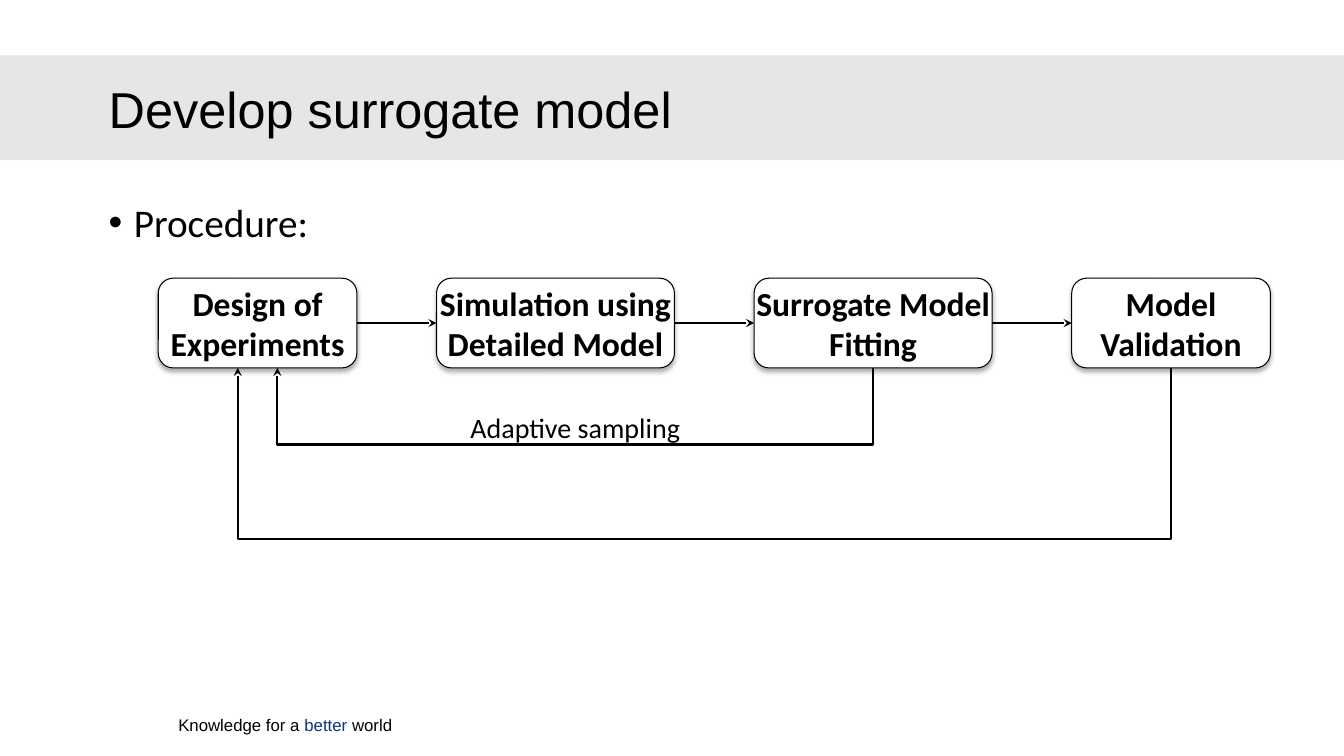
from lxml.etree import SubElement
from pptx import Presentation
from pptx.dml.color import RGBColor
from pptx.enum.shapes import MSO_CONNECTOR as Connector, MSO_SHAPE as Shape
from pptx.enum.text import MSO_ANCHOR as Anchor, PP_ALIGN as Align
from pptx.oxml.ns import qn
from pptx.util import Inches, Pt

COLORS = {"black": "000000", "white": "FFFFFF", "band": "E7E6E6", "accent": "0D3475"}
STEPS = [
    ("Design of\nExperiments", 1.97),
    ("Simulation using\nDetailed Model", 2.36),
    ("Surrogate Model\nFitting", 2.36),
    ("Model\nValidation", 1.97),
]
GAP = 0.79


def color(name):
    return RGBColor.from_string(COLORS[name])


def write_text(frame, text, size, font="Calibri", bold=False, align=Align.LEFT,
               anchor=Anchor.TOP, wrap=True, spacing=None, after=None,
               bullet=None, accent=None):
    frame.word_wrap = wrap
    frame.vertical_anchor = anchor
    for index, line in enumerate(text.split("\n")):
        paragraph = frame.paragraphs[0] if index == 0 else frame.add_paragraph()
        paragraph.alignment = align
        if spacing:
            paragraph.line_spacing = spacing
        if after:
            paragraph.space_after = Pt(after)
        if bullet:
            properties = paragraph._p.get_or_add_pPr()
            properties.set("marL", str(Inches(0.25)))
            properties.set("indent", str(Inches(-0.25)))
            SubElement(properties, qn("a:buFont"), typeface="Arial")
            SubElement(properties, qn("a:buChar"), char=bullet)
        before, word, rest = line.partition(accent) if accent else (line, "", "")
        for part, name in ((before, "black"), (word, "accent"), (rest, "black")):
            if part:
                run = paragraph.add_run()
                run.text = part
                run.font.size = Pt(size)
                run.font.name = font
                run.font.bold = bold
                run.font.color.rgb = color(name)


def add_text(slide, box, text, size, **text_format):
    shape = slide.shapes.add_textbox(*map(Inches, box))
    write_text(shape.text_frame, text, size, **text_format)


def style_arrow(arrow):
    arrow.line.color.rgb = color("black")
    arrow.line.width = Pt(1.5)
    SubElement(arrow.line._get_or_add_ln(), qn("a:tailEnd"), type="stealth")


def add_soft_shadow(shape):
    shape.shadow.inherit = False
    effects = shape._element.spPr.find(qn("a:effectLst"))
    shadow = SubElement(effects, qn("a:outerShdw"), blurRad=str(Pt(3.5)),
                        dist=str(Pt(2.2)), dir="5400000", rotWithShape="0")
    shade = SubElement(shadow, qn("a:srgbClr"), val=COLORS["black"])
    SubElement(shade, qn("a:alpha"), val="32000")


def add_step(slide, box, text):
    shape = slide.shapes.add_shape(Shape.ROUNDED_RECTANGLE, *map(Inches, box))
    shape.fill.solid()
    shape.fill.fore_color.rgb = color("white")
    shape.line.color.rgb = color("black")
    shape.line.width = Pt(0.75)
    add_soft_shadow(shape)
    write_text(shape.text_frame, text, 24, bold=True, align=Align.CENTER,
               anchor=Anchor.MIDDLE, wrap=False)
    return shape


def connect_steps(slide, source, target):
    arrow = slide.shapes.add_connector(Connector.STRAIGHT, 0, 0, 0, 0)
    arrow.begin_connect(source, 3)
    arrow.end_connect(target, 1)
    style_arrow(arrow)
    SubElement(arrow._element.spPr, qn("a:effectLst"))


def add_feedback(slide, start, end, bottom, depth):
    builder = slide.shapes.build_freeform(Inches(start), Inches(bottom))
    corners = [(start, bottom + depth), (end, bottom + depth), (end, bottom)]
    builder.add_line_segments([(Inches(x), Inches(y)) for x, y in corners], close=False)
    loop = builder.convert_to_shape()
    loop.fill.background()
    loop.shadow.inherit = False
    style_arrow(loop)


def add_header(slide, left, top, width, height):
    band = slide.shapes.add_shape(Shape.RECTANGLE, *map(Inches, (left, top, width, height)))
    band.fill.solid()
    band.fill.fore_color.rgb = color("band")
    band.line.fill.background()
    band.shadow.inherit = False
    add_text(slide, (left + 0.98, top - 0.16, 11.5, 1.45), "Develop surrogate model",
             36, font="Arial", anchor=Anchor.MIDDLE, spacing=0.9)


def add_procedure(slide, left, top, height):
    shapes, centers = [], []
    x = left
    for text, width in STEPS:
        shapes.append(add_step(slide, (x, top, width, height), text))
        centers.append(x + width / 2)
        x += width + GAP
    for source, target in zip(shapes, shapes[1:]):
        connect_steps(slide, source, target)

    bottom = top + height
    first_width = STEPS[0][1]
    inner_end = left + 0.6 * first_width
    outer_end = left + 0.4 * first_width
    add_feedback(slide, centers[2], inner_end, bottom, 0.76)
    add_feedback(slide, centers[3], outer_end, bottom, 1.7)
    add_text(slide, (inner_end, bottom + 0.37, centers[2] - inner_end, 0.39),
             "Adaptive sampling", 20, align=Align.CENTER, wrap=False)


def main():
    presentation = Presentation()
    presentation.slide_width = Inches(13.33)
    presentation.slide_height = Inches(7.5)
    slide = presentation.slides.add_slide(presentation.slide_layouts[6])
    add_text(slide, (1.67, 7.04, 2.46, 0.3), "Knowledge for a better world", 12,
             font="Arial", accent="better ")
    add_header(slide, 0, 0.55, 13.33, 1.04)
    add_text(slide, (0.98, 1.97, 11.5, 4.76), "Procedure:", 28,
             spacing=0.9, after=8, bullet="•")
    add_procedure(slide, 1.57, 2.76, 0.89)
    presentation.save("out.pptx")


if __name__ == "__main__":
    main()
